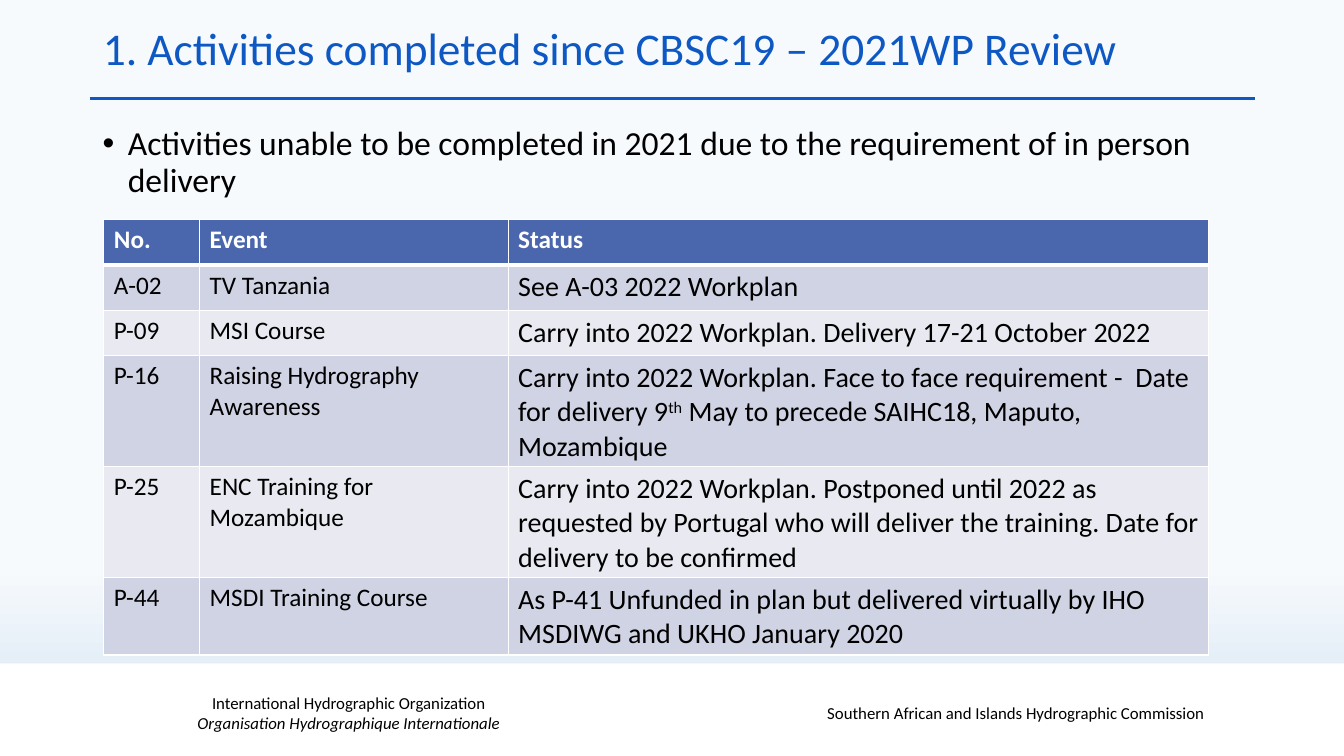
"""Build the slide reviewing the 2021 work plan activities that were not completed."""
from lxml.etree import SubElement
from pptx import Presentation
from pptx.dml.color import RGBColor
from pptx.enum.shapes import MSO_CONNECTOR, MSO_SHAPE
from pptx.enum.text import MSO_ANCHOR, MSO_AUTO_SIZE, PP_ALIGN
from pptx.oxml import parse_xml
from pptx.oxml.ns import nsdecls, qn
from pptx.util import Inches, Pt

FONT = "Calibri"
BLUE, BLACK, WHITE = "0E58C4", "000000", "FFFFFF"
HEADER_FILL, ROW_FILLS = "4A66AC", ("D0D3E3", "E9EAF1")

TITLE = "1. Activities completed since CBSC19 – 2021WP Review"
BULLET = "Activities unable to be completed in 2021 due to the requirement of in person delivery"
FOOTERS = [
    ((1.21, 6.87, 4.5, 0.4), [("International Hydrographic Organization", False),
                              ("Organisation Hydrographique Internationale", True)]),
    ((7.55, 6.87, 5.09, 0.4), [("Southern African and Islands Hydrographic Commission ", False)]),
]
COLUMN_WIDTHS = (0.95, 3.06, 6.95)
ROW_HEIGHTS = (0.45, 0.45, 0.45, 0.77, 0.77, 0.61)
ROWS = [
    ("No.", "Event", ["Status"]),
    ("A-02", "TV Tanzania", ["See A-03 2022 Workplan"]),
    ("P-09", "MSI Course", ["Carry into 2022 Workplan. Delivery 17-21 October 2022"]),
    ("P-16", "Raising Hydrography Awareness",
     ["Carry into 2022 Workplan. Face to face requirement -  Date for delivery 9", "th",
      " May to precede SAIHC18, Maputo, Mozambique"]),
    ("P-25", "ENC Training for Mozambique",
     ["Carry into 2022 Workplan. Postponed until 2022 as requested by Portugal "
      "who will deliver the training. Date for delivery to be confirmed"]),
    ("P-44", "MSDI Training Course",
     ["As P-41 Unfunded in plan but delivered virtually by IHO MSDIWG and UKHO January 2020"]),
]


def color(value):
    return RGBColor.from_string(value)


def place(left, top, width, height):
    return Inches(left), Inches(top), Inches(width), Inches(height)


def add_span(para, text, size, fill=BLACK, bold=False, italic=False):
    span = para.add_run()
    span.text = text
    span.font.name = FONT
    span.font.size = Pt(size)
    span.font.bold = bold
    span.font.italic = italic
    span.font.color.rgb = color(fill)
    return span


def add_background(page):
    fill = page.background.fill
    fill.gradient()
    fill.gradient_angle = 270
    for stop, (position, value) in zip(fill.gradient_stops, [(0.75, "F7FAFD"), (1, "D0E2F1")]):
        stop.position = position
        stop.color.rgb = color(value)


def add_footer_band(page):
    band = page.shapes.add_shape(MSO_SHAPE.RECTANGLE, *place(0, 6.58, 13.33, 0.92))
    band.shadow.inherit = False
    band.fill.solid()
    band.fill.fore_color.rgb = color(WHITE)
    band.line.fill.background()
    for area, lines in FOOTERS:
        frame = page.shapes.add_textbox(*place(*area)).text_frame
        frame.word_wrap = True
        frame.vertical_anchor = MSO_ANCHOR.MIDDLE
        para = frame.paragraphs[0]
        para.alignment = PP_ALIGN.CENTER
        for index, (text, italic) in enumerate(lines):
            if index:
                para.add_line_break()
            add_span(para, text, 12, italic=italic)


def add_title(page):
    title = page.shapes.title
    title.left, title.top, title.width, title.height = place(0.92, 0.21, 12.32, 0.59)
    frame = title.text_frame
    frame.auto_size = MSO_AUTO_SIZE.NONE
    frame.vertical_anchor = MSO_ANCHOR.MIDDLE
    para = frame.paragraphs[0]
    para.alignment = PP_ALIGN.LEFT
    para.line_spacing = 0.9
    add_span(para, TITLE, 32.4, BLUE)

    rule = page.shapes.add_connector(MSO_CONNECTOR.STRAIGHT, Inches(0.89), Inches(0.98),
                                     Inches(12.45), Inches(0.98))
    rule.line.color.rgb = color(BLUE)
    rule.line.width = Pt(2.25)
    SubElement(rule._element.spPr, qn("a:effectLst"))


def add_bullet(page):
    frame = page.shapes.add_textbox(*place(0.92, 1.21, 11.5, 0.9)).text_frame
    frame.word_wrap = True
    para = frame.paragraphs[0]
    properties = para._p.get_or_add_pPr()
    properties.set("marL", str(Inches(0.25)))
    properties.set("indent", str(Inches(-0.25)))
    SubElement(properties, qn("a:buFont"), typeface="Arial")
    SubElement(properties, qn("a:buChar"), char="•")
    para.line_spacing = 0.9
    add_span(para, BULLET, 24)


def set_borders(cell, top, bottom):
    properties = cell._tc.get_or_add_tcPr()
    for index, (side, width) in enumerate([("L", 1), ("R", 1), ("T", top), ("B", bottom)]):
        properties.insert(index, parse_xml(
            f'<a:ln{side} {nsdecls("a")} w="{Pt(width)}"><a:solidFill>'
            f'<a:srgbClr val="{WHITE}"/></a:solidFill></a:ln{side}>'))


def add_activities(page):
    area = place(1.03, 2.18, sum(COLUMN_WIDTHS), sum(ROW_HEIGHTS))
    table = page.shapes.add_table(len(ROWS), len(COLUMN_WIDTHS), *area).table
    for column, width in zip(table.columns, COLUMN_WIDTHS):
        column.width = Inches(width)
    for row_index, (number, event, status) in enumerate(ROWS):
        table.rows[row_index].height = Inches(ROW_HEIGHTS[row_index])
        header = row_index == 0
        for column_index, texts in enumerate([[number], [event], status]):
            cell = table.cell(row_index, column_index)
            cell.fill.solid()
            cell.fill.fore_color.rgb = color(HEADER_FILL if header else ROW_FILLS[(row_index - 1) % 2])
            set_borders(cell, 3 if row_index == 1 else 1, 3 if header else 1)
            size = 20 if column_index == 2 and not header else 18
            for text in texts:
                span = add_span(cell.text_frame.paragraphs[0], text, size,
                                WHITE if header else BLACK, bold=header)
                if text == "th":
                    span.font._element.set("baseline", "30000")


def main():
    deck = Presentation()
    deck.slide_width, deck.slide_height = Inches(13.33), Inches(7.5)
    page = deck.slides.add_slide(deck.slide_layouts[5])
    add_background(page)
    add_footer_band(page)
    add_title(page)
    add_bullet(page)
    add_activities(page)
    deck.save("out.pptx")


if __name__ == "__main__":
    main()
